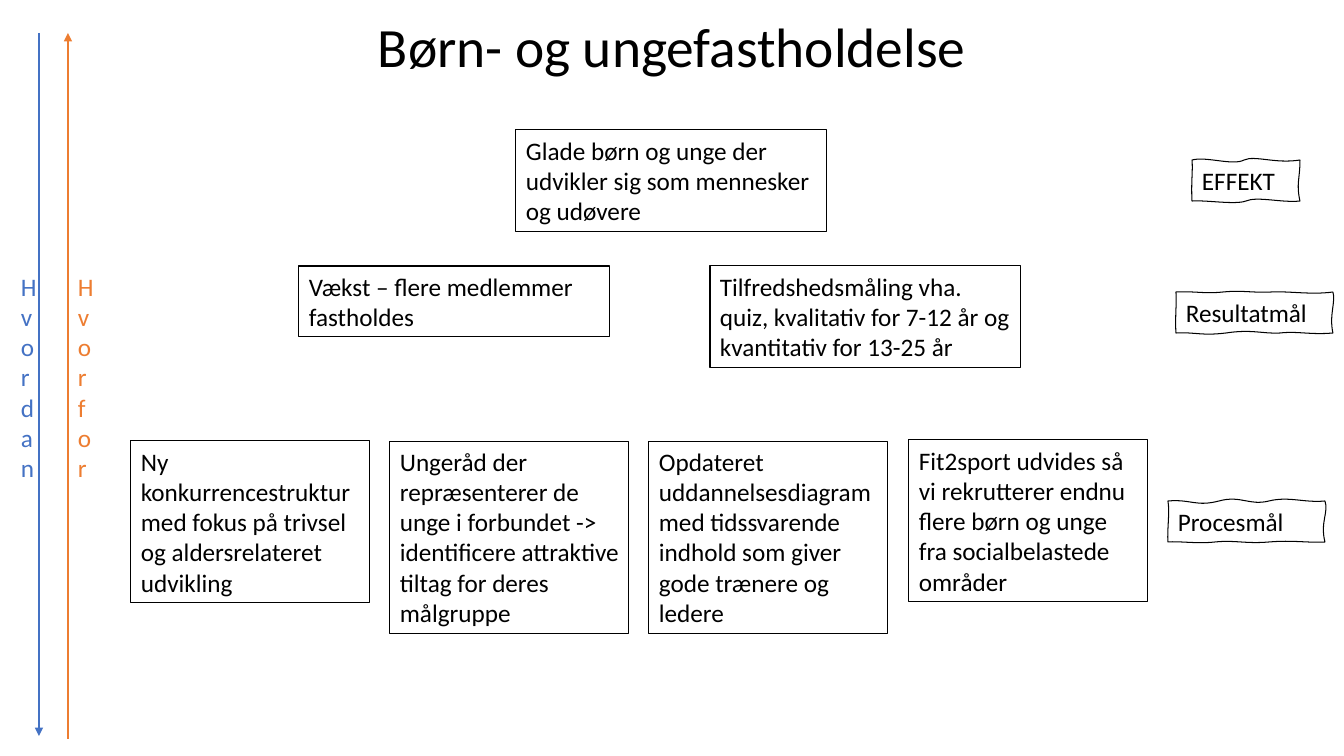
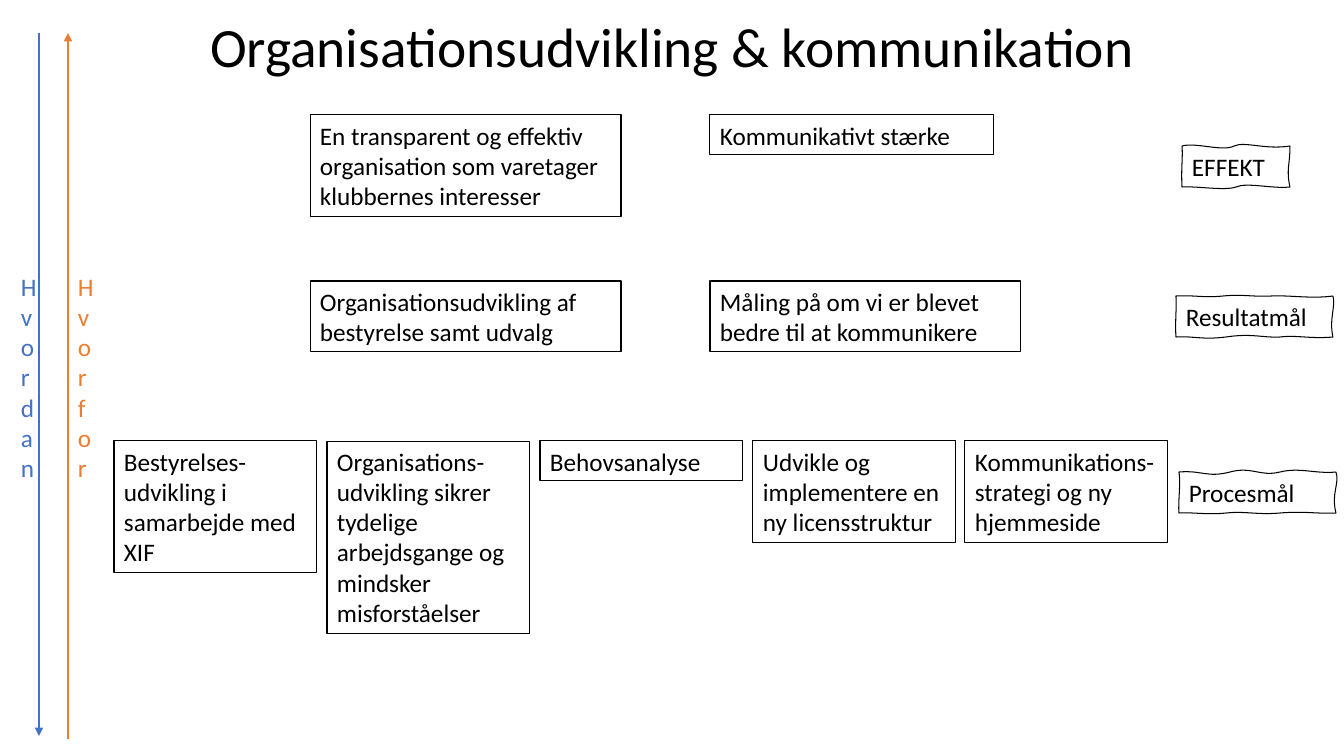
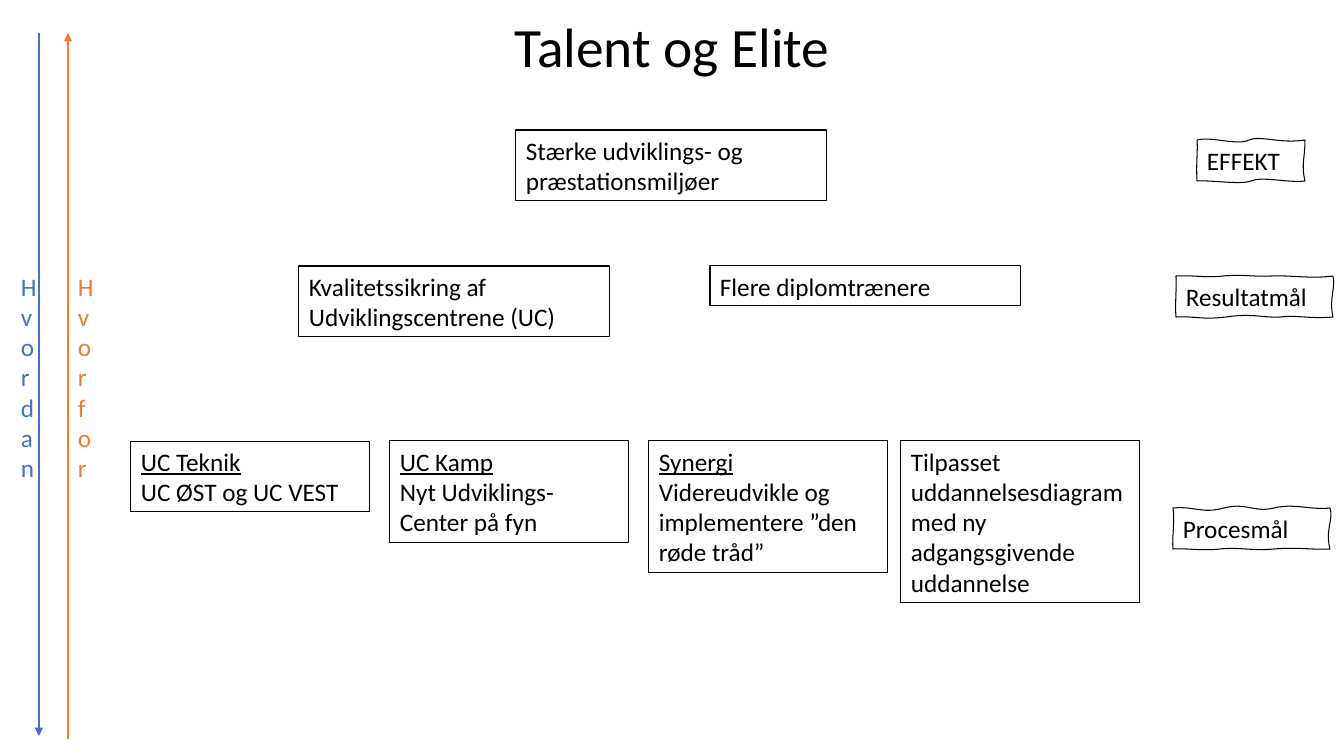
from lxml import etree
from pptx import Presentation
from pptx.dml.color import RGBColor
from pptx.enum import shapes, text
from pptx.oxml.ns import qn
from pptx.util import Emu, Pt

PX = 914400 / 100.8
FONT = "Calibri"
HUES = {"ink": "000000", "how": "4472C4", "why": "ED7D31"}

# x, from y, to y, hue
ARROWS = [(39, 33, 736, "how"), (68, 739, 33, "why")]
# left, text, hue
COLUMNS = [(11, "Hvordan", "how"), (68, "Hvor\nfor", "why")]

# Wavy outlines from the top left corner: two control points and an end each
WAVES = {
    "EFFEKT": [
        (14, -4, 41, 6, 52, 0), (63, -5, 83, 4, 108, 0),
        (108, 19, 104, 24, 108, 41), (90, 43, 65, 36, 54, 41),
        (43, 45, 15, 40, 0, 41), (-1, 21, 1, 11, 0, 0)],
    "Resultatmål": [
        (21, -1, 27, 2, 47, 0), (67, -2, 76, 1, 95, 0),
        (114, -1, 135, 3, 157, 0), (160, 10, 153, 23, 157, 41),
        (134, 43, 122, 39, 104, 41), (87, 42, 76, 37, 50, 41),
        (25, 44, 20, 40, 0, 41), (-1, 24, 1, 10, 0, 0)],
    "Procesmål": [
        (23, -2, 28, 6, 51, 0), (73, -6, 81, 5, 101, 0),
        (121, -5, 136, 2, 157, 0), (161, 11, 152, 21, 157, 41),
        (139, 42, 125, 39, 101, 41), (78, 43, 67, 39, 47, 41),
        (29, 43, 11, 40, 0, 41), (-1, 29, 2, 12, 0, 0)],
}

# Each row: left, top, box width, step, boxes as (line count, paragraphs).
# A first line before a break is an underlined heading.
SLIDES = [
    {"title": "Børn- og ungefastholdelse",
     "labels": [(1192, 160), (1176, 292), (1168, 501)],
     "goals": [
         (516, 130, 311, 0, [
             (3, ["Glade børn og unge der udvikler sig som mennesker og "
                  "udøvere"])]),
         (299, 266, 311, 411, [
             (2, ["Vækst – flere medlemmer fastholdes"]),
             (3, ["Tilfredshedsmåling vha. quiz, kvalitativ for 7-12 år og "
                  "kvantitativ for 13-25 år"])])],
     "steps": [
         (131, 441, 239, 259, [
             (5, ["Ny konkurrencestruktur med fokus på trivsel og "
                  "aldersrelateret udvikling"]),
             (6, ["Ungeråd der repræsenterer de unge i forbundet -> "
                  "identificere attraktive tiltag for deres målgruppe"]),
             (6, ["Opdateret uddannelsesdiagram med tidssvarende indhold "
                  "som giver gode trænere og ledere"])]),
         (909, 440, 239, 0, [
             (5, ["Fit2sport udvides så vi rekrutterer endnu flere børn og "
                  "unge fra socialbelastede områder"])])]},
    {"title": "Organisationsudvikling & kommunikation",
     "labels": [(1182, 146), (1176, 296), (1179, 472)],
     "goals": [
         (310, 115, 311, 0, [
             (3, ["En transparent og effektiv organisation som varetager "
                  "klubbernes interesser"])]),
         (310, 281, 311, 400, [
             (2, ["Organisationsudvikling af bestyrelse samt udvalg"]),
             (2, ["Måling på om vi er blevet bedre til at kommunikere"])])],
     "steps": [
         (114, 441, 203, 213, [
             (4, ["Bestyrelses-udvikling i samarbejde med XIF"]),
             (6, ["Organisations-udvikling sikrer tydelige arbejdsgange og "
                  "mindsker misforståelser"]),
             (1, ["Behovsanalyse"]),
             (3, ["Udvikle og implementere en ny licensstruktur"])]),
         (710, 115, 284, 0, [(1, ["Kommunikativt stærke"])]),
         (965, 441, 203, 0, [
             (3, ["Kommunikations-strategi og ny hjemmeside"])])]},
    {"title": "Talent og Elite",
     "labels": [(1197, 140), (1176, 276), (1173, 508)],
     "goals": [
         (516, 130, 311, 0, [
             (2, ["Stærke udviklings- og præstationsmiljøer"])]),
         (299, 266, 311, 411, [
             (2, ["Kvalitetssikring af Udviklingscentrene (UC)"]),
             (1, ["Flere diplomtrænere"])])],
     "steps": [
         (131, 441, 239, 259, [
             (2, ["UC Teknik", "UC ØST og UC VEST"]),
             (3, ["UC Kamp\nNyt Udviklings-Center på fyn"]),
             (4, ["Synergi\nVidereudvikle og implementere ”den røde tråd”"])]),
         (901, 441, 239, 0, [
             (5, ["Tilpasset uddannelsesdiagram med ny adgangsgivende "
                  "uddannelse"])])]},
]


def emu(*sizes):
    return [Emu(round(s * PX)) for s in sizes]


def tint(name):
    return RGBColor.from_string(HUES[name])


def write(frame, paras, hue="ink", size=18, align=text.PP_ALIGN.LEFT,
          anchor=text.MSO_ANCHOR.TOP, fit=True, head=False):
    """Fill a frame; head underlines the first of several lines."""
    frame.word_wrap = True
    frame.vertical_anchor = anchor
    modes = text.MSO_AUTO_SIZE
    frame.auto_size = modes.SHAPE_TO_FIT_TEXT if fit else modes.NONE
    several = len(paras) > 1 or "\n" in paras[0]
    for i, words in enumerate(paras):
        para = frame.add_paragraph() if i else frame.paragraphs[0]
        para.alignment = align
        for j, line in enumerate(words.split("\n")):
            if j:
                para.add_line_break()
            run = para.add_run()
            run.text = line
            font = run.font
            font.name, font.size = FONT, Pt(size)
            font.color.rgb = tint(hue)
            if head and several and i + j == 0:
                font.underline = True


def frame_line(shape):
    shape.shadow.inherit = False
    shape.fill.background()
    shape.line.color.rgb = tint("ink")
    shape.line.width = Pt(0.75)


def add_title(slide, words):
    title = slide.shapes.title
    title.left, title.top, title.width, title.height = emu(168, 10, 1008, 75)
    write(title.text_frame, [words], size=39.6, align=text.PP_ALIGN.CENTER,
          anchor=text.MSO_ANCHOR.BOTTOM, fit=False)
    title.text_frame.paragraphs[0].line_spacing = 0.9


def add_axes(slide):
    """Draw the two arrows and the upright words beside them."""
    for x, start, end, hue in ARROWS:
        arrow = slide.shapes.add_connector(
            shapes.MSO_CONNECTOR.STRAIGHT, *emu(x, start, x, end))
        arrow.line.color.rgb = tint(hue)
        arrow.line.width = Pt(1.5)
        props = arrow.element.spPr
        etree.SubElement(props.find(qn("a:ln")), qn("a:tailEnd"), type="triangle")
        etree.SubElement(props, qn("a:effectLst"))
    for left, words, hue in COLUMNS:
        box = slide.shapes.add_textbox(*emu(left, 266, 37, 224))
        write(box.text_frame, [words], hue)


def add_row(slide, left, top, width, step, boxes):
    for i, (count, paras) in enumerate(boxes):
        box = slide.shapes.add_shape(
            shapes.MSO_SHAPE.RECTANGLE,
            *emu(left + i * step, top, width, 10 + round(30.5 * count)))
        frame_line(box)
        write(box.text_frame, paras, head=True)


def bend(shape, curves):
    """Turn the straight segments of an outline into cubic curves."""
    lines = list(shape.element.iter(qn("a:lnTo")))
    for line, curve in zip(lines, curves):
        line.tag = qn("a:cubicBezTo")
        end = line[0]
        for x, y in (curve[:2], curve[2:4]):
            knot = etree.Element(qn("a:pt"))
            for axis, size in zip("xy", emu(x, y)):
                knot.set(axis, str(int(size)))
            end.addprevious(knot)


def add_label(slide, name, left, top):
    curves = WAVES[name]
    pen = slide.shapes.build_freeform(*emu(left, top))
    pen.add_line_segments(
        [emu(left + x, top + y) for *_, x, y in curves], close=True)
    label = pen.convert_to_shape()
    bend(label, curves)
    frame_line(label)
    write(label.text_frame, [name])


def main():
    deck = Presentation()
    deck.slide_width, deck.slide_height = emu(1344, 756)
    for page in SLIDES:
        slide = deck.slides.add_slide(deck.slide_layouts[5])
        add_title(slide, page["title"])
        add_axes(slide)
        for row in page["goals"]:
            add_row(slide, *row)
        for name, spot in zip(WAVES, page["labels"]):
            add_label(slide, name, *spot)
        for row in page["steps"]:
            add_row(slide, *row)
    deck.save("out.pptx")


if __name__ == "__main__":
    main()
